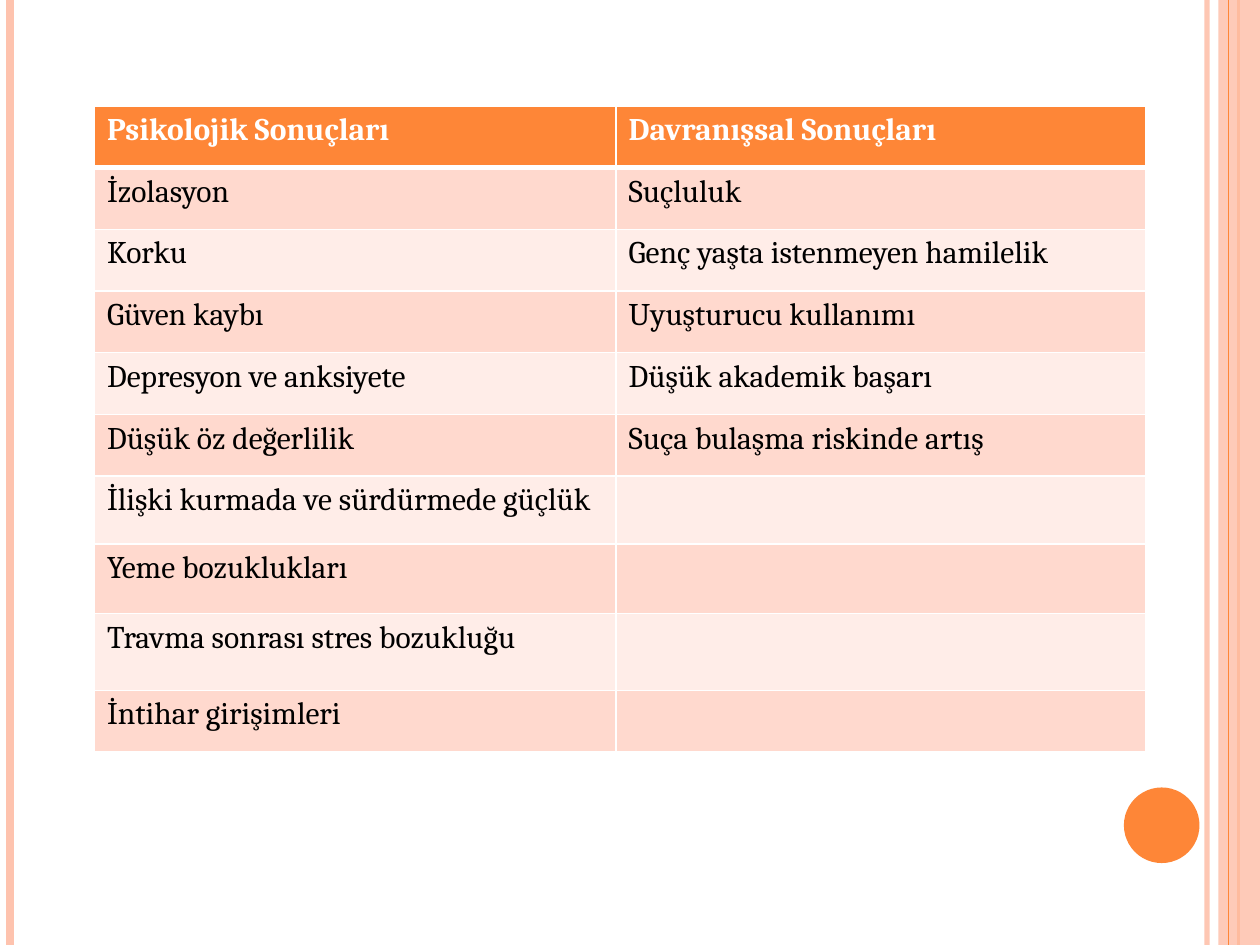
from dataclasses import dataclass
from itertools import zip_longest

from lxml.etree import SubElement
from pptx import Presentation
from pptx.dml.color import RGBColor
from pptx.enum.shapes import MSO_CONNECTOR, MSO_SHAPE
from pptx.oxml.ns import qn
from pptx.util import Inches, Pt


@dataclass(frozen=True)
class Theme:
    orange: str = "FE8637"
    peach: str = "FEC3AE"
    band_dark: str = "FFD9CE"
    band_light: str = "FFEDE8"
    white: str = "FFFFFF"
    black: str = "000000"
    font: str = "Cambria"
    size: int = 18


THEME = Theme()
WIDTH, HEIGHT = 10, 7.5


def set_opacity(fill_parent, percent):
    color = next(fill_parent.iter(qn("a:srgbClr")))
    SubElement(color, qn("a:alpha"), val=str(percent * 1000))


def add_border(cell, side, width):
    ln = SubElement(cell._tc.get_or_add_tcPr(), qn(f"a:ln{side}"), w=str(Pt(width)))
    fill = SubElement(ln, qn("a:solidFill"))
    SubElement(fill, qn("a:srgbClr"), val=THEME.white)


prs = Presentation()
prs.slide_width, prs.slide_height = Inches(WIDTH), Inches(HEIGHT)
s = prs.slides.add_slide(prs.slide_layouts[6])

# Side stripes, the right band and the circle, from back to front
decor = [
    ("line", 9.58, THEME.peach, 3, 93),
    ("line", 0.08, THEME.peach, 4.5, 100),
    ("line", 9.83, THEME.orange, 1.5, 100),
    ("band", 9.67, THEME.peach, 0, 87),
    ("line", 9.75, THEME.orange, 0.75, 100),
    ("circle", 8.92, THEME.orange, 0, 100),
]
for kind, x, color, weight, opacity in decor:
    if kind == "line":
        sp = s.shapes.add_connector(
            MSO_CONNECTOR.STRAIGHT, Inches(x), 0, Inches(x), Inches(HEIGHT))
        sp.line.width = Pt(weight)
        paint = sp.line.fill
    else:
        if kind == "band":
            sp = s.shapes.add_shape(
                MSO_SHAPE.RECTANGLE, Inches(x), 0, Inches(WIDTH - x), Inches(HEIGHT))
        else:
            sp = s.shapes.add_shape(
                MSO_SHAPE.OVAL, Inches(x), Inches(6.25), Inches(0.6), Inches(0.6))
        sp.shadow.inherit = False
        sp.line.fill.background()
        paint = sp.fill
    paint.solid()
    paint.fore_color.rgb = RGBColor.from_string(color)
    if opacity < 100:
        set_opacity(sp._element.spPr, opacity)
    if kind == "line":
        SubElement(sp._element.spPr, qn("a:effectLst"))

# Table of consequences
psychological = [
    "Psikolojik Sonuçları", "İzolasyon", "Korku", "Güven kaybı",
    "Depresyon ve anksiyete", "Düşük öz değerlilik",
    "İlişki kurmada ve sürdürmede güçlük", "Yeme bozuklukları",
    "Travma sonrası stres bozukluğu", "İntihar girişimleri",
]
behavioural = [
    "Davranışsal Sonuçları", "Suçluluk", "Genç yaşta istenmeyen hamilelik",
    "Uyuşturucu kullanımı", "Düşük akademik başarı", "Suça bulaşma riskinde artış",
]
rows = list(zip_longest(psychological, behavioural, fillvalue=""))
col_widths = [4.14, 4.2]
row_heights = [0.49] * 6 + [0.54, 0.55, 0.61, 0.49]

table = s.shapes.add_table(
    len(rows), len(col_widths), Inches(0.75), Inches(0.84),
    Inches(sum(col_widths)), Inches(sum(row_heights))).table
for column, width in zip(table.columns, col_widths):
    column.width = Inches(width)
for row, height in zip(table.rows, row_heights):
    row.height = Inches(height)

for i, texts in enumerate(rows):
    header = i == 0
    band = THEME.orange if header else (THEME.band_light, THEME.band_dark)[i % 2]
    for j, text in enumerate(texts):
        cell = table.cell(i, j)
        for side in "LRTB":
            under_header = (side, i) in (("B", 0), ("T", 1))
            add_border(cell, side, 3 if under_header else 1)
        cell.fill.solid()
        cell.fill.fore_color.rgb = RGBColor.from_string(band)
        p = cell.text_frame.paragraphs[0]
        p.text = text
        p.font.name, p.font.size, p.font.bold = THEME.font, Pt(THEME.size), header
        p.font.color.rgb = RGBColor.from_string(THEME.white if header else THEME.black)

prs.save("out.pptx")
